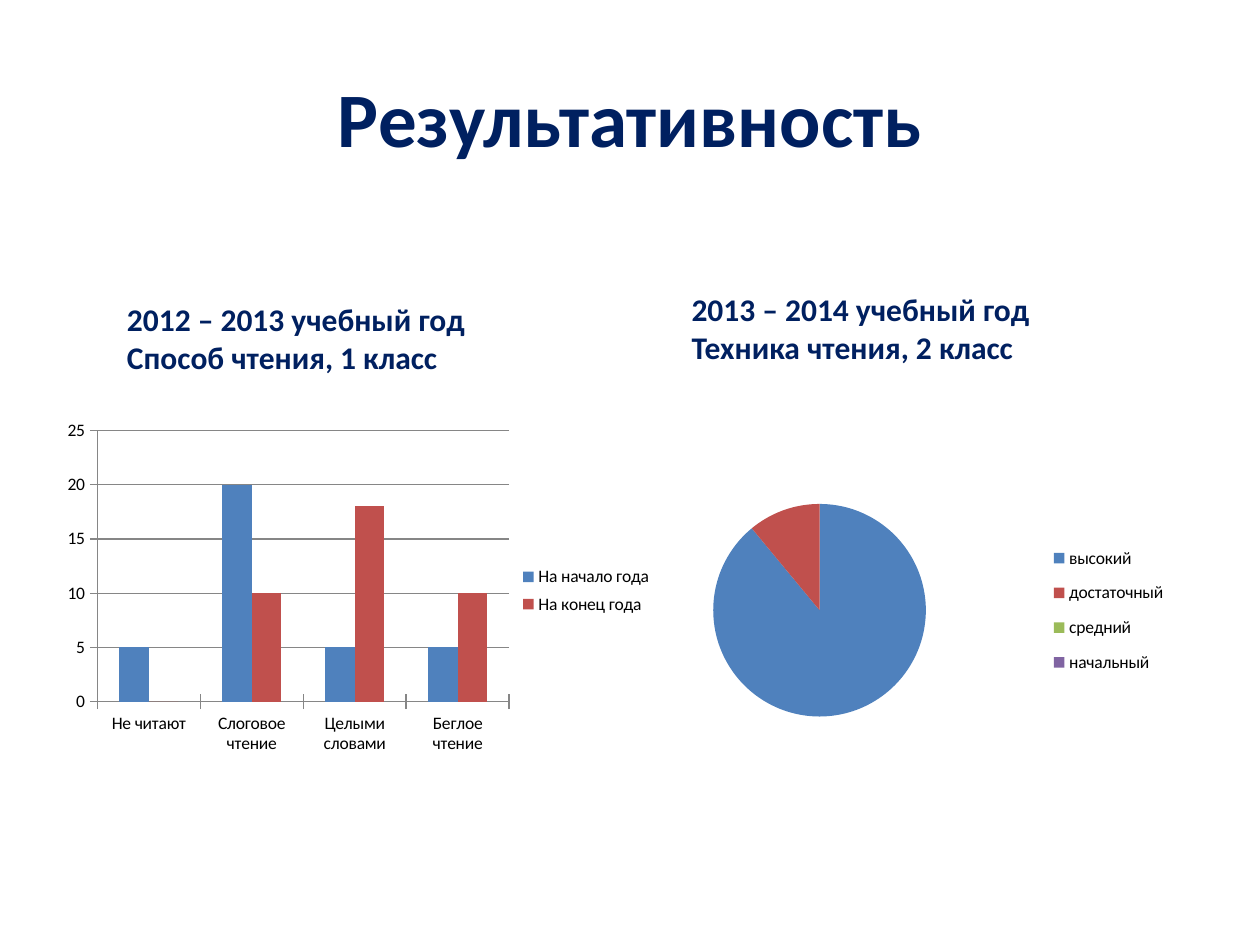
from dataclasses import dataclass

from lxml.etree import SubElement
from pptx import Presentation
from pptx.chart.chart import Chart
from pptx.chart.data import CategoryChartData
from pptx.dml.color import RGBColor
from pptx.enum.chart import XL_CHART_TYPE, XL_LEGEND_POSITION, XL_TICK_MARK
from pptx.enum.text import MSO_ANCHOR, PP_ALIGN
from pptx.oxml.ns import qn
from pptx.util import Inches, Pt

FONT = "Calibri"
NAVY = "002060"
AXIS_GRAY = "868686"
PALETTE = ["4F81BD", "C0504D", "9BBB59", "8064A2"]


@dataclass
class Box:
    left: float
    top: float
    width: float
    height: float

    def lengths(self) -> list:
        return [Inches(v) for v in (self.left, self.top, self.width, self.height)]


@dataclass
class Caption:
    box: Box
    lines: list[str]
    size: int
    align: PP_ALIGN = PP_ALIGN.LEFT
    anchor: MSO_ANCHOR = MSO_ANCHOR.TOP


@dataclass
class Results:
    box: Box
    kind: XL_CHART_TYPE
    categories: list[str]
    series: dict[str, list[int]]
    plot: Box
    legend: Box


CAPTIONS = [
    Caption(Box(0.5, 0.3, 9, 1.25), ["Результативность"], 44,
            PP_ALIGN.CENTER, MSO_ANCHOR.MIDDLE),
    Caption(Box(5.39, 2.25, 3.07, 0.71),
            ["2013 – 2014 учебный год", "Техника чтения, 2 класс"], 18),
    Caption(Box(0.91, 2.33, 3.07, 0.71),
            ["2012 – 2013 учебный год", "Способ чтения, 1 класс"], 18),
]

READING_METHOD = Results(
    Box(0.43, 3.28, 4.88, 2.76), XL_CHART_TYPE.COLUMN_CLUSTERED,
    ["Не читают", "Слоговое чтение", "Целыми словами", "Беглое чтение"],
    {"На начало года": [5, 20, 5, 5], "На конец года": [0, 10, 18, 10]},
    Box(0.07, 0.05, 0.67, 0.78), Box(0.73, 0.42, 0.27, 0.18),
)
READING_LEVEL = Results(
    Box(5.16, 3.36, 4.41, 2.91), XL_CHART_TYPE.PIE,
    ["высокий", "достаточный", "средний", "начальный"],
    {"Series 1": [89, 11, 0, 0]},
    Box(0.08, 0.22, 0.45, 0.58), Box(0.69, 0.3, 0.27, 0.42),
)


def color(value: str) -> RGBColor:
    return RGBColor.from_string(value)


def paint(part, value: str) -> None:
    part.format.fill.solid()
    part.format.fill.fore_color.rgb = color(value)


def place(parent, area: Box, index: int, inner: bool) -> None:
    for existing in parent.findall(qn("c:layout")):
        parent.remove(existing)
    layout = SubElement(parent, qn("c:layout"))
    parent.insert(index, layout)
    manual = SubElement(layout, qn("c:manualLayout"))
    settings = {"layoutTarget": "inner"} if inner else {}
    settings |= {"xMode": "edge", "yMode": "edge", "x": area.left,
                 "y": area.top, "w": area.width, "h": area.height}
    for tag, value in settings.items():
        SubElement(manual, qn(f"c:{tag}")).set("val", str(value))


def add_caption(slide, caption: Caption) -> None:
    frame = slide.shapes.add_textbox(*caption.box.lengths()).text_frame
    frame.word_wrap = True
    frame.vertical_anchor = caption.anchor
    frame.text = "\n".join(caption.lines)
    for paragraph in frame.paragraphs:
        paragraph.alignment = caption.align
        for run in paragraph.runs:
            run.font.name = FONT
            run.font.size = Pt(caption.size)
            run.font.bold = True
            run.font.color.rgb = color(NAVY)


def add_results(slide, results: Results) -> Chart:
    data = CategoryChartData()
    data.categories = results.categories
    for name, values in results.series.items():
        data.add_series(name, values)
    chart = slide.shapes.add_chart(results.kind, *results.box.lengths(), data).chart
    chart.has_title = False
    chart.font.name = FONT
    chart.font.size = Pt(10)
    chart.font.color.rgb = color("000000")
    chart.has_legend = True
    chart.legend.position = XL_LEGEND_POSITION.RIGHT
    chart.legend.include_in_layout = False
    plot_area = chart.plots[0]._element.getparent()
    place(plot_area, results.plot, 0, True)
    place(plot_area.getparent().find(qn("c:legend")), results.legend, 1, False)
    return chart


def style_columns(chart: Chart) -> None:
    plot = chart.plots[0]
    plot.vary_by_categories = False
    plot.gap_width = 150
    plot.overlap = 0
    for series, fill in zip(plot.series, PALETTE):
        paint(series, fill)
    for axis in (chart.category_axis, chart.value_axis):
        axis.major_tick_mark = XL_TICK_MARK.CROSS
        axis.minor_tick_mark = XL_TICK_MARK.NONE
        axis.format.line.color.rgb = color(AXIS_GRAY)
    chart.value_axis.minimum_scale = 0
    chart.value_axis.maximum_scale = 25
    chart.value_axis.major_unit = 5
    chart.value_axis.has_major_gridlines = True
    chart.value_axis.major_gridlines.format.line.color.rgb = color(AXIS_GRAY)


def style_pie(chart: Chart) -> None:
    plot = chart.plots[0]
    plot.vary_by_categories = True
    for index, fill in enumerate(PALETTE):
        paint(plot.series[0].points[index], fill)


def main() -> None:
    presentation = Presentation()
    presentation.slide_width = Inches(10)
    presentation.slide_height = Inches(7.5)
    slide = presentation.slides.add_slide(presentation.slide_layouts[6])
    style_columns(add_results(slide, READING_METHOD))
    for caption in CAPTIONS:
        add_caption(slide, caption)
    style_pie(add_results(slide, READING_LEVEL))
    presentation.save("out.pptx")


if __name__ == "__main__":
    main()
